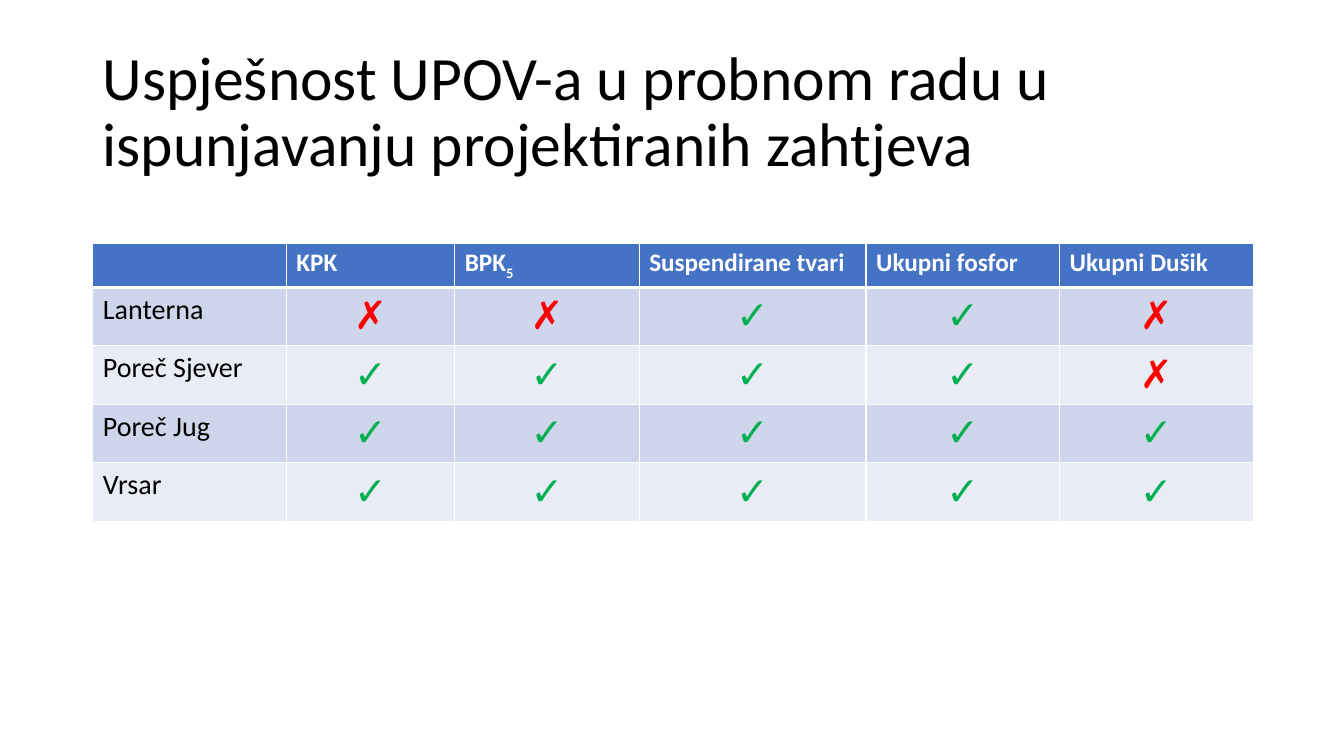
from lxml import etree
from pptx import Presentation
from pptx.dml.color import RGBColor
from pptx.enum import text
from pptx.oxml import ns
from pptx.util import Inches, Pt

COLORS = {
    "text": "000000", "white": "FFFFFF", "header": "4472C4",
    "odd": "CFD5EA", "even": "E9EBF5", "✓": "00B050", "✗": "FF0000",
}


def add_run(paragraph, content, size, color, bold=False):
    run = paragraph.add_run()
    run.text = content
    run.font.name = "Calibri"
    run.font.size = Pt(size)
    run.font.bold = bold
    run.font.color.rgb = RGBColor.from_string(COLORS[color])
    return run


def style_cell(cell, fill, bottom_width, top_width):
    cell.fill.solid()
    cell.fill.fore_color.rgb = RGBColor.from_string(COLORS[fill])
    properties = cell._tc.get_or_add_tcPr()
    widths = {"lnL": 1, "lnR": 1, "lnT": top_width, "lnB": bottom_width}
    for position, (side, width) in enumerate(widths.items()):
        line = etree.Element(ns.qn(f"a:{side}"), w=str(Pt(width)))
        solid = etree.SubElement(line, ns.qn("a:solidFill"))
        etree.SubElement(solid, ns.qn("a:srgbClr"), val=COLORS["white"])
        properties.insert(position, line)


presentation = Presentation()
presentation.slide_width = Inches(13.33)
presentation.slide_height = Inches(7.5)
slide = presentation.slides.add_slide(presentation.slide_layouts[6])

# Title
title = slide.shapes.add_textbox(Inches(0.92), Inches(0.4), Inches(11.5), Inches(1.45))
title.text_frame.word_wrap = True
title.text_frame.vertical_anchor = text.MSO_ANCHOR.MIDDLE
paragraph = title.text_frame.paragraphs[0]
paragraph.line_spacing = 0.9
add_run(paragraph, "Uspješnost UPOV-a u probnom radu u ispunjavanju projektiranih zahtjeva",
        44, "text")

# Table grid
headers = ["", "KPK", "BPK", "Suspendirane tvari", "Ukupni fosfor", "Ukupni Dušik"]
results = {
    "Lanterna": "✗✗✓✓✗",
    "Poreč Sjever": "✓✓✓✓✗",
    "Poreč Jug": "✓✓✓✓✓",
    "Vrsar": "✓✓✓✓✓",
}
table = slide.shapes.add_table(len(results) + 1, len(headers), Inches(0.92), Inches(2.41),
                               Inches(11.5), Inches(2.73)).table
for column, width in zip(table.columns, [1.92, 1.67, 1.83, 2.25, 1.92, 1.92]):
    column.width = Inches(width)
for index, row in enumerate(table.rows):
    row.height = Inches(0.58 if index else 0.43)

# Header row
for column, header in enumerate(headers):
    cell = table.cell(0, column)
    style_cell(cell, "header", bottom_width=3, top_width=1)
    if header:
        paragraph = cell.text_frame.paragraphs[0]
        add_run(paragraph, header, 18, "white", bold=True)
        if header == "BPK":
            subscript = add_run(paragraph, "5", 18, "white", bold=True)
            subscript.font._element.set("baseline", "-25000")

# Plant rows with pass and fail marks
for row, (plant, marks) in enumerate(results.items(), start=1):
    for column, content in enumerate([plant, *marks]):
        cell = table.cell(row, column)
        style_cell(cell, "odd" if row % 2 else "even", bottom_width=1,
                   top_width=3 if row == 1 else 1)
        paragraph = cell.text_frame.paragraphs[0]
        if column == 0:
            add_run(paragraph, content, 20, "text")
        else:
            paragraph.alignment = text.PP_ALIGN.CENTER
            add_run(paragraph, content, 28, content)

presentation.save("out.pptx")
